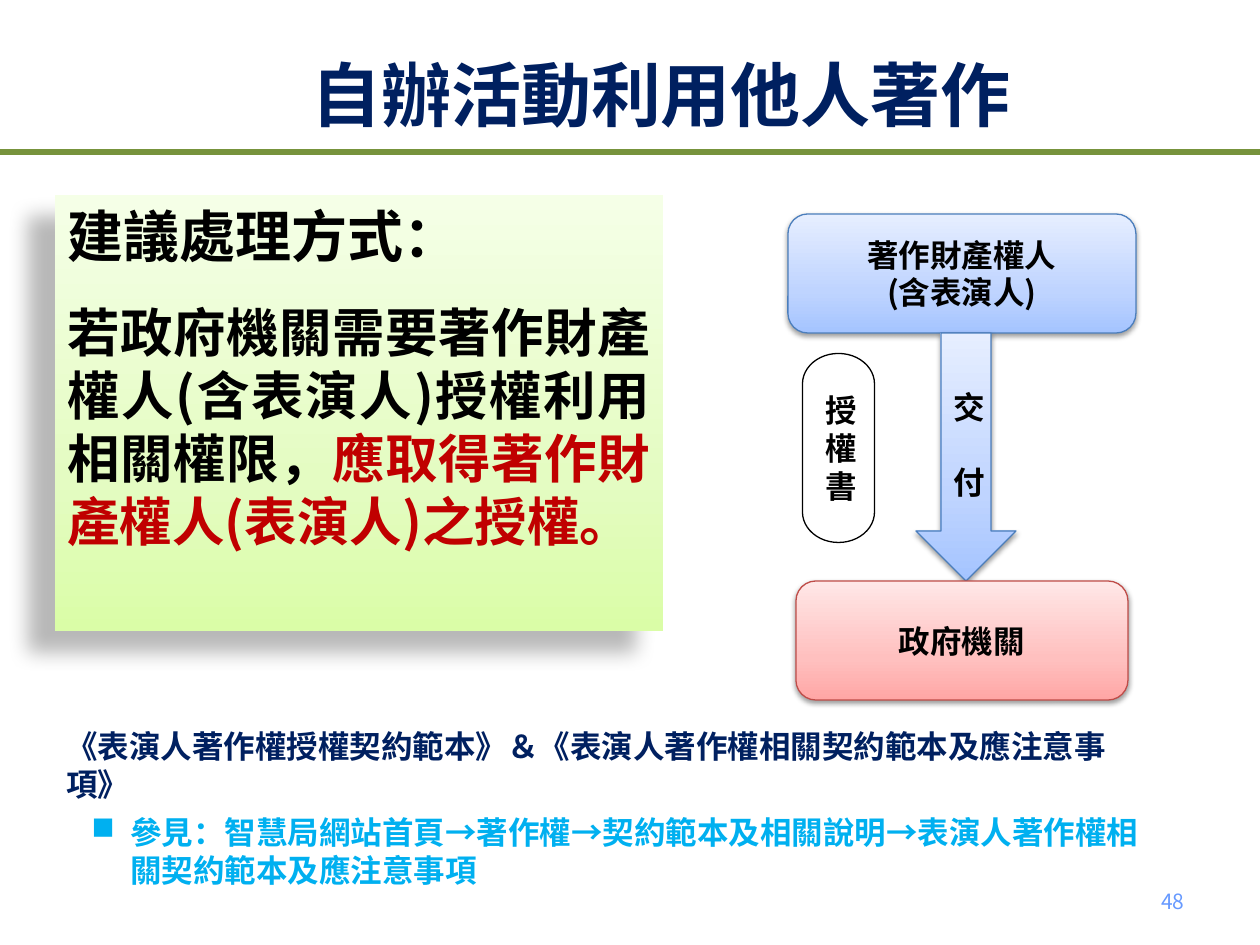
from copy import deepcopy

from lxml.etree import SubElement
from pptx import Presentation
from pptx.dml.color import RGBColor
from pptx.enum.shapes import MSO_SHAPE as Shape
from pptx.enum.text import MSO_ANCHOR as Anchor, PP_ALIGN as Align
from pptx.oxml.ns import qn
from pptx.util import Emu, Pt

PX = 7257.6  # EMU per px, 126 px to the inch
FONT = "Noto Sans CJK SC"
BLACK = RGBColor(0x00, 0x00, 0x00)
WHITE = RGBColor(0xFF, 0xFF, 0xFF)
NAVY = RGBColor(0x00, 0x20, 0x60)
OLIVE = RGBColor(0x77, 0x93, 0x3C)
RED = RGBColor(0xC0, 0x00, 0x00)
SKY = RGBColor(0x00, 0xB0, 0xF0)
PAGE_BLUE = RGBColor(0x66, 0x99, 0xFF)
BLUE_LINE = RGBColor(0x4B, 0x7E, 0xBC)
RED_LINE = RGBColor(0xBF, 0x4C, 0x48)

# Gradient colours at 0, 35 and 100 percent, from the bottom up
GREENS = (RGBColor(0xDA, 0xFD, 0xA7), RGBColor(0xE4, 0xFC, 0xC2), RGBColor(0xF5, 0xFF, 0xE7))
BLUES = (RGBColor(0xA4, 0xC4, 0xFF), RGBColor(0xBF, 0xD4, 0xFF), RGBColor(0xE6, 0xEE, 0xFF))
PINKS = (RGBColor(0xFF, 0xA6, 0xA5), RGBColor(0xFF, 0xC0, 0xBF), RGBColor(0xFF, 0xE7, 0xE7))

# Shadows: opacity in percent, blur and distance in points, direction in degrees
WIDE_SHADOW = (28, 11.8, 19.7, 141)
SOFT_SHADOW = (38, 3.1, 1.6, 90)


def px(value):
    return Emu(round(value * PX))


def fill_gradient(shape, colors):
    shape.fill.gradient()
    shape.fill.gradient_angle = 90
    stop_list = shape._element.spPr.find(qn("a:gradFill")).find(qn("a:gsLst"))
    stop_list.insert(1, deepcopy(stop_list[0]))
    for stop, color, position in zip(shape.fill.gradient_stops, colors, (0, 0.35, 1)):
        stop.color.rgb = color
        stop.position = position


def add_shadow(shape, opacity, blur, distance, direction):
    effects = shape._element.spPr.find(qn("a:effectLst"))
    outer = SubElement(effects, qn("a:outerShdw"), blurRad=str(Pt(blur)), dist=str(Pt(distance)),
                       dir=str(direction * 60000), algn="ctr", rotWithShape="0")
    color = SubElement(outer, qn("a:srgbClr"), val="000000")
    SubElement(color, qn("a:alpha"), val=str(opacity * 1000))


def add_box(slide, kind, box, fill, line=None, shadow=None):
    shape = slide.shapes.add_shape(kind, *map(px, box))
    if isinstance(fill, RGBColor):
        shape.fill.solid()
        shape.fill.fore_color.rgb = fill
    else:
        fill_gradient(shape, fill)
    if line is None:
        shape.line.fill.background()
    else:
        shape.line.color.rgb = line
        shape.line.width = Pt(0.75)
    shape.shadow.inherit = False
    if shadow:
        add_shadow(shape, *shadow)
    return shape


def add_text_box(slide, box):
    return slide.shapes.add_textbox(*map(px, box))


def write(shape, paragraphs, size, color=BLACK, align=Align.CENTER, anchor=Anchor.MIDDLE,
          bold=True, name=FONT, leading=1.2):
    """Fill a shape with paragraphs, each a list of run texts, and return them."""
    frame = shape.text_frame
    frame.word_wrap = True
    frame.vertical_anchor = anchor
    for index, texts in enumerate(paragraphs):
        paragraph = frame.paragraphs[0] if index == 0 else frame.add_paragraph()
        paragraph.alignment = align
        paragraph.line_spacing = Pt(round(size * leading, 1))
        for text in texts:
            paragraph.add_run().text = text
        font = paragraph.font
        font.size, font.bold, font.name = Pt(size), bold, name
        font.color.rgb = color
        defaults = paragraph._p.pPr.find(qn("a:defRPr"))
        SubElement(defaults, qn("a:ea"), typeface=FONT)
    return frame.paragraphs


def add_header(slide, left, top, width):
    add_box(slide, Shape.RECTANGLE, (left, top + 149, width, 6), OLIVE)
    title = add_text_box(slide, (left + 134, top + 36, 1054, 132))
    write(title, [["自辦活動利用他人著作"]], 40, NAVY, anchor=Anchor.TOP, leading=1.33)


def add_advice(slide, box):
    panel = add_box(slide, Shape.RECTANGLE, box, GREENS, shadow=WIDE_SHADOW)
    heading, advice = write(panel, [
        ["建議處理方式："],
        ["若政府機關需要著作財產權人(含表演人)授權利用相關權限，",
         "應取得著作財產權人(表演人)之授權。"],
    ], 30, align=Align.JUSTIFY, anchor=Anchor.TOP)
    heading.font.size = Pt(32)
    heading.line_spacing = Pt(38.4)
    heading.space_after = Pt(12)
    advice.space_before = Pt(6)
    advice.runs[1].font.color.rgb = RED


def add_flow(slide, left, top):
    # Owner, arrow and agency, all centred on one axis
    owner = add_box(slide, Shape.ROUNDED_RECTANGLE, (left, top, 348, 119),
                    BLUES, BLUE_LINE, SOFT_SHADOW)
    write(owner, [["著作財產權人"], ["(含表演人)"]], 18)
    arrow = add_box(slide, Shape.DOWN_ARROW, (left + 128, top + 119, 100, 248),
                    BLUES, BLUE_LINE, SOFT_SHADOW)
    write(arrow, [["交 付"]], 18)
    agency = add_box(slide, Shape.ROUNDED_RECTANGLE, (left + 8, top + 367, 332, 119),
                     PINKS, RED_LINE, SOFT_SHADOW)
    write(agency, [["政府機關"]], 18)

    # Licence: a terminator stood on end, with its text kept upright
    licence = add_box(slide, Shape.FLOWCHART_TERMINATOR, (left - 44, top + 198, 189, 72),
                      WHITE, BLACK)
    licence.rotation = 90
    write(licence, [["授"], ["權書"]], 18, name="Arial")
    licence.text_frame._txBody.bodyPr.set("vert", "vert270")


def add_references(slide, box):
    _, source = write(add_text_box(slide, box), [
        ["《表演人著作權授權契約範本》＆《表演人著作權相關契約範本及應注意事項》"],
        ["參見：智慧局網站首頁→著作權→契約範本及相關說明→表演人著作權相關契約範本及應注意事項"],
    ], 18, NAVY, Align.LEFT, Anchor.TOP)
    source.font.color.rgb = SKY
    source.space_before = Pt(6)
    properties = source._p.pPr
    properties.set("marL", str(px(64)))
    properties.set("indent", str(px(-39)))
    bullet = SubElement(properties, qn("a:buChar"), char="■")
    properties.find(qn("a:defRPr")).addprevious(bullet)


def add_page_number(slide, box):
    write(add_text_box(slide, box), [["48"]], 12, PAGE_BLUE, Align.RIGHT, bold=False)


def main():
    presentation = Presentation()
    presentation.slide_width, presentation.slide_height = px(1260), px(945)
    slide = presentation.slides.add_slide(presentation.slide_layouts[6])
    add_header(slide, 0, 0, 1260)
    add_advice(slide, (55, 195, 608, 436))
    add_page_number(slide, (903, 876, 294, 50))
    add_flow(slide, 788, 214)
    add_references(slide, (54, 721, 1111, 176))
    presentation.save("out.pptx")


if __name__ == "__main__":
    main()
